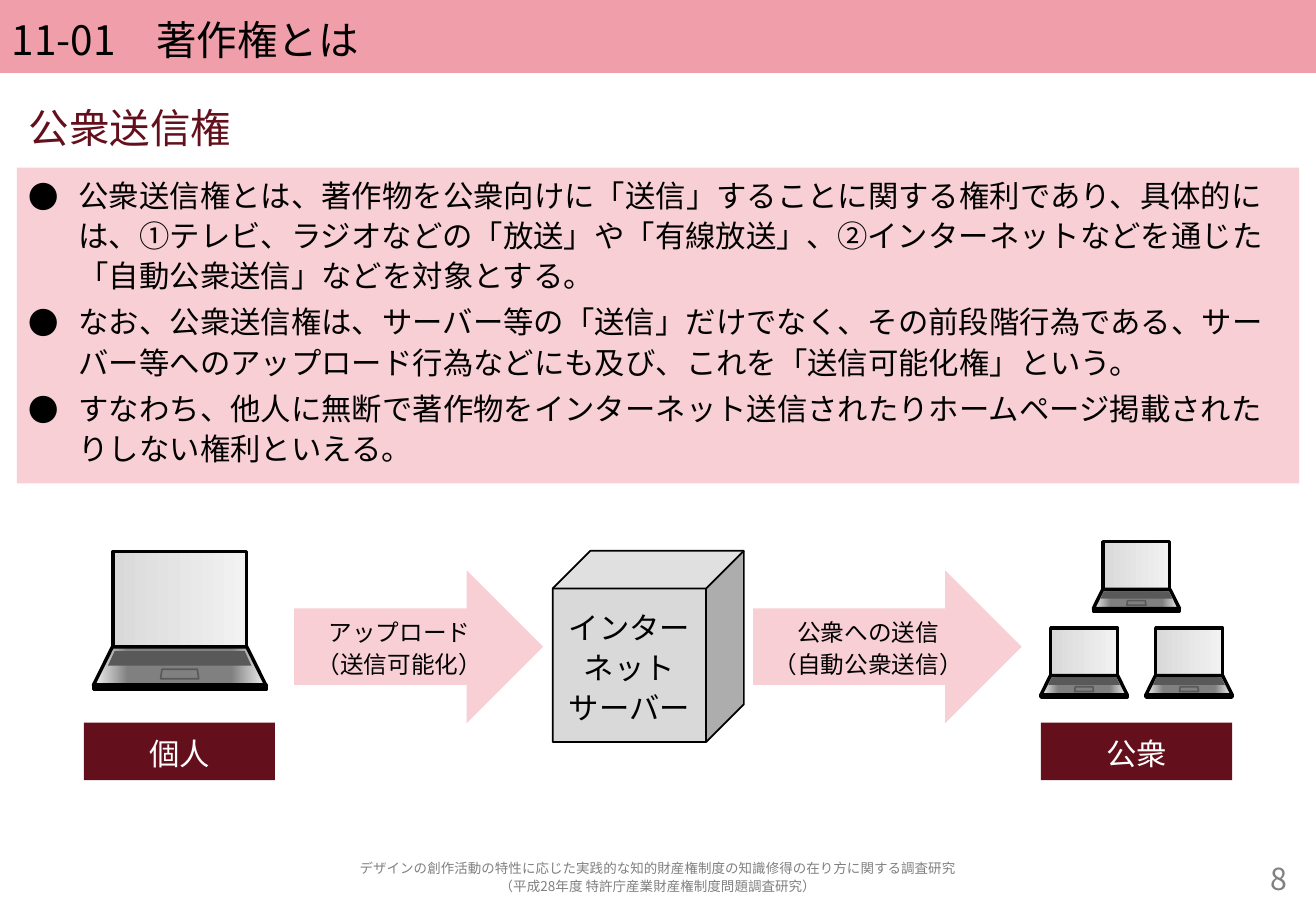
from copy import deepcopy
from lxml import etree
from pptx import Presentation
from pptx.dml.color import RGBColor
from pptx.enum import shapes, text
from pptx.oxml.ns import qn
from pptx.util import Pt

FONT = "Noto Sans CJK JP"
BLACK = RGBColor(0x00, 0x00, 0x00)
WHITE = RGBColor(0xFF, 0xFF, 0xFF)
ROSE = RGBColor(0xF0, 0x9F, 0xAA)
PINK = RGBColor(0xF8, 0xCF, 0xD5)
WINE = RGBColor(0x64, 0x10, 0x1C)
GREY = RGBColor(0x80, 0x80, 0x80)
DARK = RGBColor(0x59, 0x59, 0x59)
SILVER = RGBColor(0xD9, 0xD9, 0xD9)
PALE = RGBColor(0xF2, 0xF2, 0xF2)

KIND = shapes.MSO_SHAPE
LEFT, CENTER, RIGHT = text.PP_ALIGN.LEFT, text.PP_ALIGN.CENTER, text.PP_ALIGN.RIGHT
TOP, MIDDLE = text.MSO_ANCHOR.TOP, text.MSO_ANCHOR.MIDDLE

POINTS = [
    "公衆送信権とは、著作物を公衆向けに「送信」することに関する権利であり、具体的には、①テレビ、ラジオなどの「放送」や「有線放送」、②インターネットなどを通じた「自動公衆送信」などを対象とする。",
    "なお、公衆送信権は、サーバー等の「送信」だけでなく、その前段階行為である、サーバー等へのアップロード行為などにも及び、これを「送信可能化権」という。",
    "すなわち、他人に無断で著作物をインターネット送信されたりホームページ掲載されたりしない権利といえる。",
]
FOOTER = [
    "デザインの創作活動の特性に応じた実践的な知的財産権制度の知識修得の在り方に関する調査研究",
    "（平成28年度 特許庁産業財産権制度問題調査研究）",
]
MARGIN, WIDTH = 10, 760
TEXTS = [
    ((MARGIN, 54.7, WIDTH, 34), ["公衆送信権"], dict(size=24, color=WINE)),
    ((MARGIN, 508.3, WIDTH, 22.3), FOOTER,
     dict(size=8, color=GREY, align=CENTER, anchor=MIDDLE)),
    ((673, 508.3, 97, 22.3), ["8"],
     dict(size=18, color=GREY, align=RIGHT, anchor=MIDDLE)),
]
BOXES = [
    (KIND.RECTANGLE, (0, 0, 780, 43.2), ROSE, ["11-01\u3000著作権とは"],
     dict(size=24, anchor=MIDDLE)),
    (KIND.RECTANGLE, (MARGIN, 99.4, WIDTH, 187.2), PINK, POINTS,
     dict(size=18, bullet=True, before=3.6)),
]
LABEL = dict(size=18, color=WHITE, align=CENTER, anchor=MIDDLE)
STEP = dict(size=14, align=CENTER, anchor=MIDDLE)
FLOW = [
    (KIND.RIGHT_ARROW, (174.3, 338, 147.6, 90.7), PINK, ["アップロード", "（送信可能化）"], STEP),
    (KIND.RIGHT_ARROW, (446.4, 338, 159.1, 90.7), PINK, ["公衆への送信", "（自動公衆送信）"], STEP),
    (KIND.RECTANGLE, (49.7, 428.4, 113.3, 34), WINE, ["個人"], LABEL),
    (KIND.RECTANGLE, (617, 428.4, 113.3, 34), WINE, ["公衆"], LABEL),
]
SERVER = (KIND.CUBE, (327.6, 326.5, 113.3, 113.3), SILVER, ["インターネット", "サーバー"],
          dict(size=18, align=CENTER, anchor=MIDDLE))

SCREEN = [(0, SILVER), (1, PALE)]
DECK = [(0, PALE), (0.2, GREY), (0.8, GREY), (1, PALE)]
LAPTOP = [
    (KIND.RECTANGLE, (11.5, 0, 79.2, 56.6), SCREEN, (BLACK, 2), None),
    (KIND.TRAPEZOID, (0, 56.6, 102.2, 22.6), DECK, (BLACK, 2), 0.496),
    (KIND.RECTANGLE, (0, 79.2, 102.2, 2.8), BLACK, (BLACK, 2), None),
    (KIND.TRAPEZOID, (8.6, 59, 85, 8.6), DARK, None, 0.465),
    (KIND.TRAPEZOID, (39.8, 69.8, 22.6, 5.6), GREY, (DARK, 1), 0.151),
]
PUBLIC = [(648, 321.1), (617, 372.2), (679.2, 372.2)]


def paint(sp, fill):
    if not isinstance(fill, list):
        sp.fill.solid()
        sp.fill.fore_color.rgb = fill
        return
    sp.fill.gradient()
    sp.fill.gradient_angle = 0
    stops = sp._element.spPr.find(".//" + qn("a:gsLst"))
    for _ in fill[2:]:
        stops.append(deepcopy(stops[0]))
    for stop, (position, color) in zip(sp.fill.gradient_stops, fill):
        stop.position = position
        stop.color.rgb = color


def add_shape(parent, kind, box, fill, line=None, adj=None):
    sp = parent.add_shape(kind, *map(Pt, box))
    sp.shadow.inherit = False
    paint(sp, fill)
    if line:
        sp.line.color.rgb, sp.line.width = line[0], Pt(line[1])
    else:
        sp.line.fill.background()
    if adj is not None:
        sp.adjustments[0] = adj
    return sp


def add_bullet(p):
    pPr = p._p.get_or_add_pPr()
    pPr.set("marL", str(Pt(29.5)))
    pPr.set("indent", str(-Pt(29.5)))
    etree.SubElement(pPr, qn("a:buFont"), typeface=FONT)
    etree.SubElement(pPr, qn("a:buChar"), char="●")


def write(sp, lines, size, color=BLACK, align=LEFT, anchor=TOP, before=0, bullet=False):
    tf = sp.text_frame
    for name, value in dict(word_wrap=True, vertical_anchor=anchor).items():
        setattr(tf, name, value)
    for i, line in enumerate(lines):
        p = tf.add_paragraph() if i else tf.paragraphs[0]
        for name, value in dict(alignment=align, line_spacing=1.1,
                                space_before=Pt(before)).items():
            setattr(p, name, value)
        if bullet:
            add_bullet(p)
        r = p.add_run()
        r.text = line
        for name, value in dict(name=FONT, size=Pt(size)).items():
            setattr(r.font, name, value)
        r.font.color.rgb = color
        etree.SubElement(r._r.get_or_add_rPr(), qn("a:ea"), typeface=FONT)


def add_laptop(parent, left, top, scale):
    for kind, (x, y, w, h), fill, line, adj in LAPTOP:
        box = (left + x * scale, top + y * scale, w * scale, h * scale)
        add_shape(parent, kind, box, fill, line, adj)


def main():
    prs = Presentation()
    prs.slide_width, prs.slide_height = Pt(780), Pt(540)
    s = prs.slides.add_slide(prs.slide_layouts[6])
    for kind, box, fill, lines, style in BOXES + FLOW:
        write(add_shape(s.shapes, kind, box, fill), lines, **style)
    for box, lines, style in TEXTS:
        write(s.shapes.add_textbox(*map(Pt, box)), lines, **style)
    kind, box, fill, lines, style = SERVER
    write(add_shape(s.shapes, kind, box, fill, (BLACK, 1), 0.197), lines, **style)
    add_laptop(s.shapes, 55.4, 326.9, 1)
    for left, top in PUBLIC:
        add_laptop(s.shapes.add_group_shape().shapes, left, top, 0.5)
    prs.save("out.pptx")


if __name__ == "__main__":
    main()
